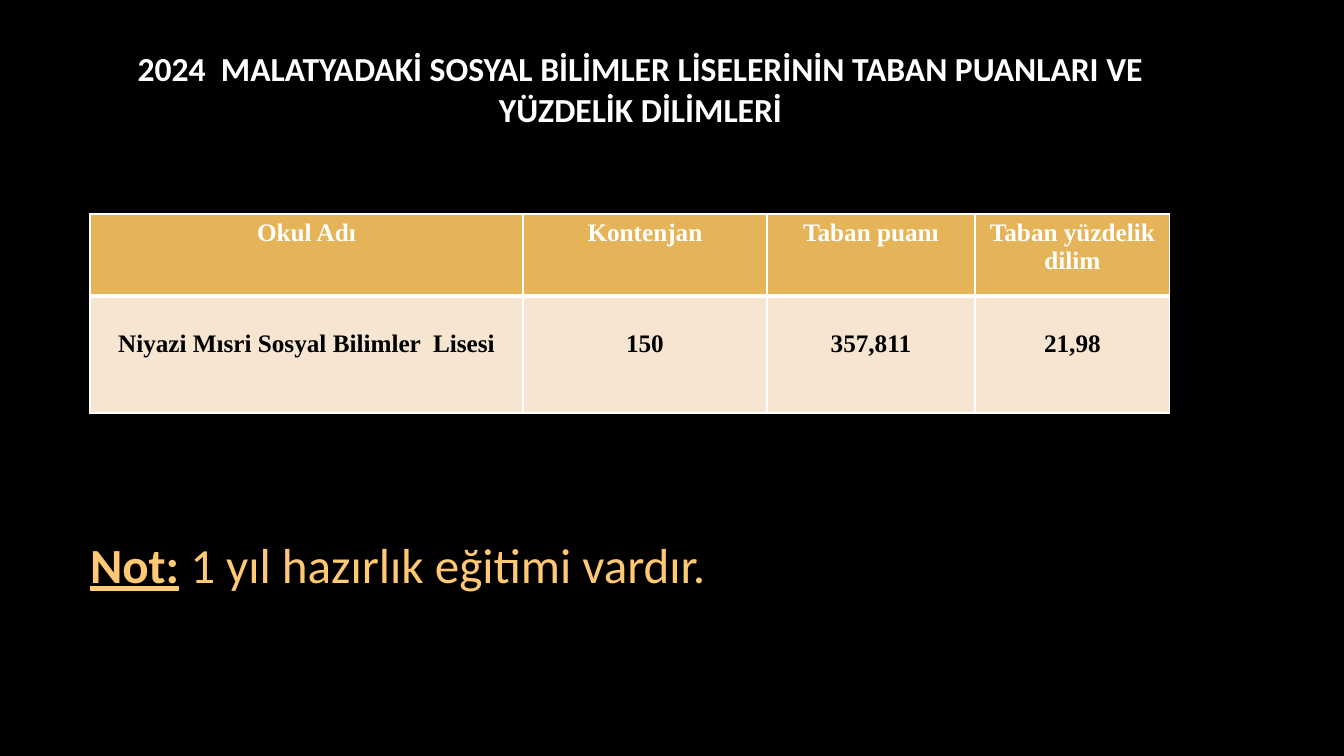
import pptx
import pptx.util
import pptx.dml.color
import pptx.enum.text
import pptx.oxml.ns
import lxml.etree

RGBColor = pptx.dml.color.RGBColor
BLACK = RGBColor(0x00, 0x00, 0x00)
WHITE = RGBColor(0xFF, 0xFF, 0xFF)
GOLD = RGBColor(0xE5, 0xB4, 0x58)
CREAM = RGBColor(0xF5, 0xE5, 0xD1)
AMBER = RGBColor(0xFF, 0xC8, 0x74)
BROWN = RGBColor(0x9F, 0x7D, 0x3D)

TITLE = "2024  MALATYADAKİ SOSYAL BİLİMLER LİSELERİNİN TABAN PUANLARI VE YÜZDELİK DİLİMLERİ"
SCHOOL_ROWS = [
    ("Okul Adı", "Kontenjan", "Taban puanı", "Taban yüzdelik dilim"),
    ("Niyazi Mısri Sosyal Bilimler  Lisesi", "150", "357,811", "21,98"),
]
NOTE_RUNS = [("Not:", True), (" 1 yıl hazırlık eğitimi vardır.", False)]

SLIDE_SIZE = (1344, 756)
TITLE_BOX = (62, 53, 1157, 71)
TABLE_ORIGIN = (90, 214)
COLUMN_WIDTHS = (433, 244, 208, 195)
NOTE_BOX = (27, 521, 907, 86)
NOTE_INDENT = 63

# Per table row: height px, top margin px, fill, text colour, top and bottom border pt
ROW_STYLES = [
    (82, 5, GOLD, WHITE, 1, 3),
    (117, 34, CREAM, BLACK, 3, 1),
]


def px(length):
    return pptx.util.Emu(round(length * 914400 / 100.8))


def add_run(paragraph, text, font_name, size, color, bold=True):
    run = paragraph.add_run()
    run.text = text
    run.font.name = font_name
    run.font.size = pptx.util.Pt(size)
    run.font.bold = bold
    run.font.color.rgb = color
    return run


def line_element(tag, color, width):
    line = lxml.etree.Element(pptx.oxml.ns.qn(tag), w=str(pptx.util.Pt(width)))
    fill = lxml.etree.SubElement(line, pptx.oxml.ns.qn("a:solidFill"))
    lxml.etree.SubElement(fill, pptx.oxml.ns.qn("a:srgbClr"), val=str(color))
    return line


def add_title(slide):
    title = slide.shapes.title
    title.left, title.top, title.width, title.height = map(px, TITLE_BOX)
    frame = title.text_frame
    frame.word_wrap = True
    frame.vertical_anchor = pptx.enum.text.MSO_ANCHOR.MIDDLE
    paragraph = frame.paragraphs[0]
    paragraph.alignment = pptx.enum.text.PP_ALIGN.CENTER
    add_run(paragraph, TITLE, "Calibri", 24, WHITE)


def fill_cell(cell, text, style):
    height, top_margin, fill_color, text_color, top_border, bottom_border = style
    cell.fill.solid()
    cell.fill.fore_color.rgb = fill_color
    cell.margin_top = px(top_margin)
    paragraph = cell.text_frame.paragraphs[0]
    paragraph.alignment = pptx.enum.text.PP_ALIGN.CENTER
    add_run(paragraph, text, "Times New Roman", 18, text_color)
    borders = [("a:lnL", 1), ("a:lnR", 1), ("a:lnT", top_border), ("a:lnB", bottom_border)]
    properties = cell._tc.get_or_add_tcPr()
    for position, (tag, width) in enumerate(borders):
        properties.insert(position, line_element(tag, WHITE, width))


def add_school_table(slide):
    left, top = map(px, TABLE_ORIGIN)
    width = px(sum(COLUMN_WIDTHS))
    height = px(sum(style[0] for style in ROW_STYLES))
    table = slide.shapes.add_table(
        len(SCHOOL_ROWS), len(COLUMN_WIDTHS), left, top, width, height).table
    for column, column_width in zip(table.columns, COLUMN_WIDTHS):
        column.width = px(column_width)
    for row, texts, style in zip(table.rows, SCHOOL_ROWS, ROW_STYLES):
        row.height = px(style[0])
        for cell, text in zip(row.cells, texts):
            fill_cell(cell, text, style)


def add_note(slide):
    frame = slide.shapes.add_textbox(*map(px, NOTE_BOX)).text_frame
    frame.word_wrap = True
    frame.vertical_anchor = pptx.enum.text.MSO_ANCHOR.MIDDLE
    frame.margin_left = px(NOTE_INDENT)
    for text, emphasized in NOTE_RUNS:
        run = add_run(frame.paragraphs[0], text, "Calibri", 35.1, AMBER, emphasized)
        run.font.underline = emphasized
        run._r.get_or_add_rPr().insert(0, line_element("a:ln", BROWN, 0.5))


def main():
    presentation = pptx.Presentation()
    presentation.slide_width, presentation.slide_height = map(px, SLIDE_SIZE)
    title_only_layout = presentation.slide_layouts[5]
    slide = presentation.slides.add_slide(title_only_layout)
    slide.background.fill.solid()
    slide.background.fill.fore_color.rgb = BLACK
    add_title(slide)
    add_school_table(slide)
    add_note(slide)
    presentation.save("out.pptx")


if __name__ == "__main__":
    main()
